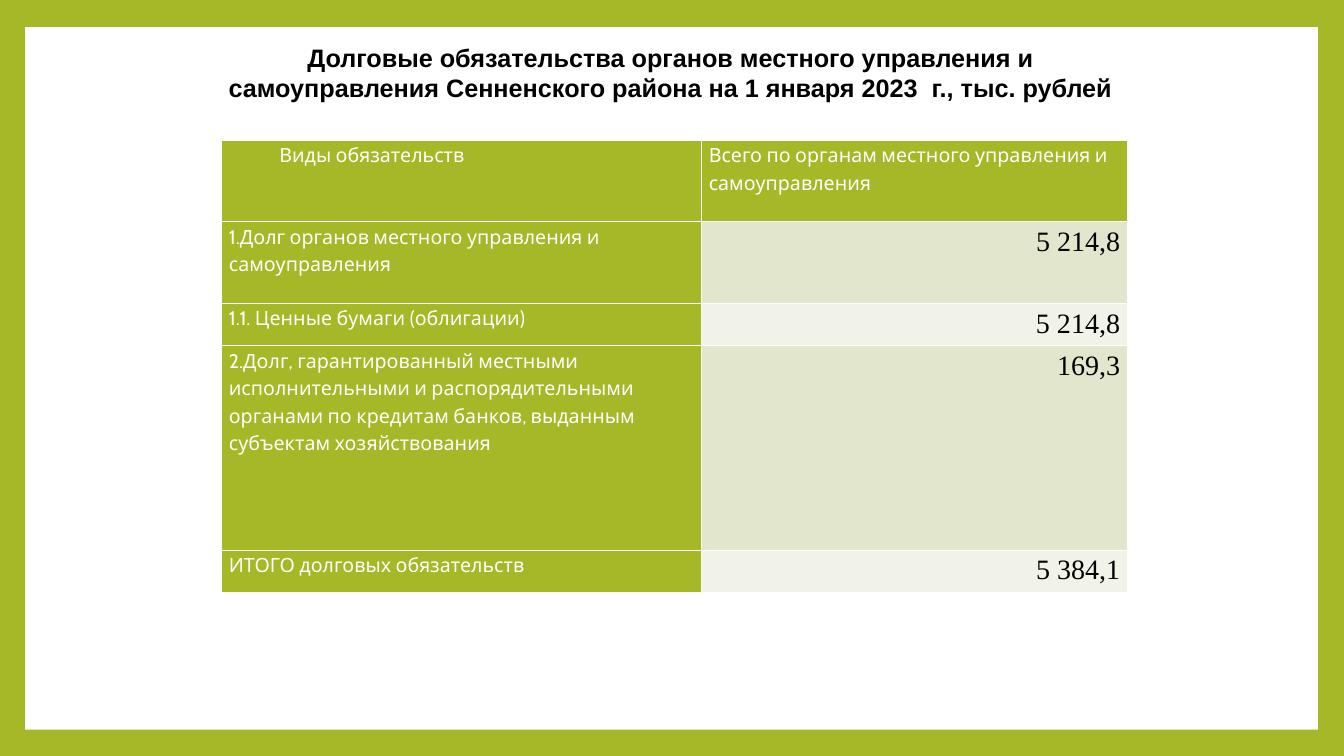
from pptx import Presentation
from pptx.dml.color import RGBColor
from pptx.enum.shapes import MSO_SHAPE as Shape
from pptx.enum.text import MSO_ANCHOR as Anchor, MSO_AUTO_SIZE as AutoSize, PP_ALIGN as Align
from pptx.oxml import parse_xml
from pptx.oxml.ns import nsdecls
from pptx.util import Inches, Pt

GREEN, WHITE, BLACK = "A6B727", "FFFFFF", "000000"
BANDS = ("E1E6CD", "F1F3E8")

TITLE = ("Долговые обязательства органов местного управления и самоуправления "
         "Сенненского района на 1 января 2023  г., тыс. рублей")
ROWS = [
    ("Виды обязательств", "Всего по органам местного управления и самоуправления"),
    ("1.Долг органов местного управления и самоуправления", "5 214,8"),
    ("1.1. Ценные бумаги (облигации)", " 5 214,8"),
    ("2.Долг, гарантированный местными исполнительными и распорядительными "
     "органами по кредитам банков, выданным субъектам хозяйствования", "169,3"),
    ("ИТОГО долговых обязательств", "5 384,1"),
]
COL_WIDTHS = (4.76, 4.22)
ROW_HEIGHTS = (0.81, 0.81, 0.42, 2.03, 0.42)


def rgb(value):
    return RGBColor.from_string(value)


class SlideBuilder:
    def __init__(self, prs):
        self.s = prs.slides.add_slide(prs.slide_layouts[5])

    def background(self, color):
        fill = self.s.background.fill
        fill.solid()
        fill.fore_color.rgb = rgb(color)

    def panel(self, box, color):
        sp = self.s.shapes.add_shape(Shape.RECTANGLE, *map(Inches, box))
        sp.shadow.inherit = False
        sp.fill.solid()
        sp.fill.fore_color.rgb = rgb(color)
        sp.line.fill.background()

    def title(self, text, box):
        sp = self.s.shapes.title
        sp.left, sp.top, sp.width, sp.height = map(Inches, box)
        # Bring the title in front of the panel
        self.s.shapes._spTree.append(sp._element)
        tf = sp.text_frame
        tf.text = text
        tf.word_wrap = True
        tf.auto_size = AutoSize.SHAPE_TO_FIT_TEXT
        tf.vertical_anchor = Anchor.MIDDLE
        p = tf.paragraphs[0]
        p.alignment = Align.CENTER
        self.style(p, "Arial", 18, BLACK, bold=True)

    def table(self, rows, left, top):
        tbl = self.s.shapes.add_table(
            len(rows), len(COL_WIDTHS), Inches(left), Inches(top),
            Inches(sum(COL_WIDTHS)), Inches(sum(ROW_HEIGHTS))).table
        tbl.first_row = tbl.horz_banding = False
        for col, width in zip(tbl.columns, COL_WIDTHS):
            col.width = Inches(width)
        for row, height in zip(tbl.rows, ROW_HEIGHTS):
            row.height = Inches(height)
        for i, texts in enumerate(rows):
            for j, text in enumerate(texts):
                is_value = i > 0 and j > 0
                self.cell(tbl.cell(i, j), text, is_value,
                          BANDS[(i - 1) % 2] if is_value else GREEN)
        first = tbl.cell(0, 0).text_frame.paragraphs[0]
        first._p.get_or_add_pPr().set("marL", str(Inches(0.5)))

    def cell(self, cell, text, is_value, color):
        cell.margin_left = cell.margin_right = Inches(0.07)
        cell.margin_top = cell.margin_bottom = 0
        p = cell.text_frame.paragraphs[0]
        p.text = text
        p.line_spacing = 1.15
        if is_value:
            p.alignment = Align.RIGHT
            self.style(p, "Times New Roman", 20, BLACK)
        else:
            self.style(p, "Cabin", 14, WHITE)
        self.borders(cell, WHITE, 1)
        cell.fill.solid()
        cell.fill.fore_color.rgb = rgb(color)

    def borders(self, cell, color, width):
        tc_pr = cell._tc.get_or_add_tcPr()
        for side in ("lnL", "lnR", "lnT", "lnB"):
            tc_pr.append(parse_xml(
                f'<a:{side} {nsdecls("a")} w="{Pt(width)}"><a:solidFill>'
                f'<a:srgbClr val="{color}"/></a:solidFill></a:{side}>'))

    def style(self, p, font, size, color, bold=False):
        for r in p.runs:
            r.font.name = font
            r.font.size = Pt(size)
            r.font.bold = bold
            r.font.color.rgb = rgb(color)


def main():
    prs = Presentation()
    prs.slide_width, prs.slide_height = Inches(13.33), Inches(7.5)
    slide = SlideBuilder(prs)
    slide.background(GREEN)
    slide.panel((0.25, 0.27, 12.82, 6.97), WHITE)
    slide.table(ROWS, 2.2, 1.39)
    slide.title(TITLE, (2.12, 0.36, 9.06, 0.71))
    prs.save("out.pptx")


if __name__ == "__main__":
    main()
